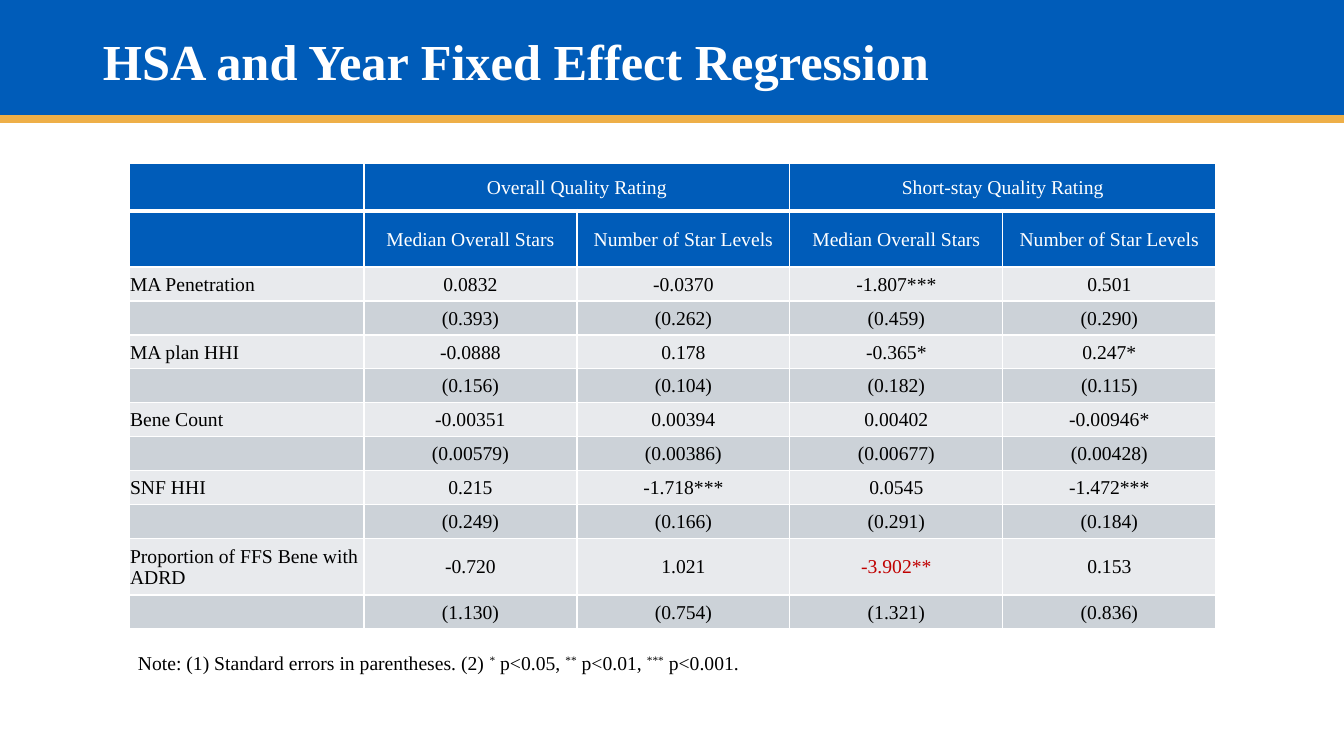
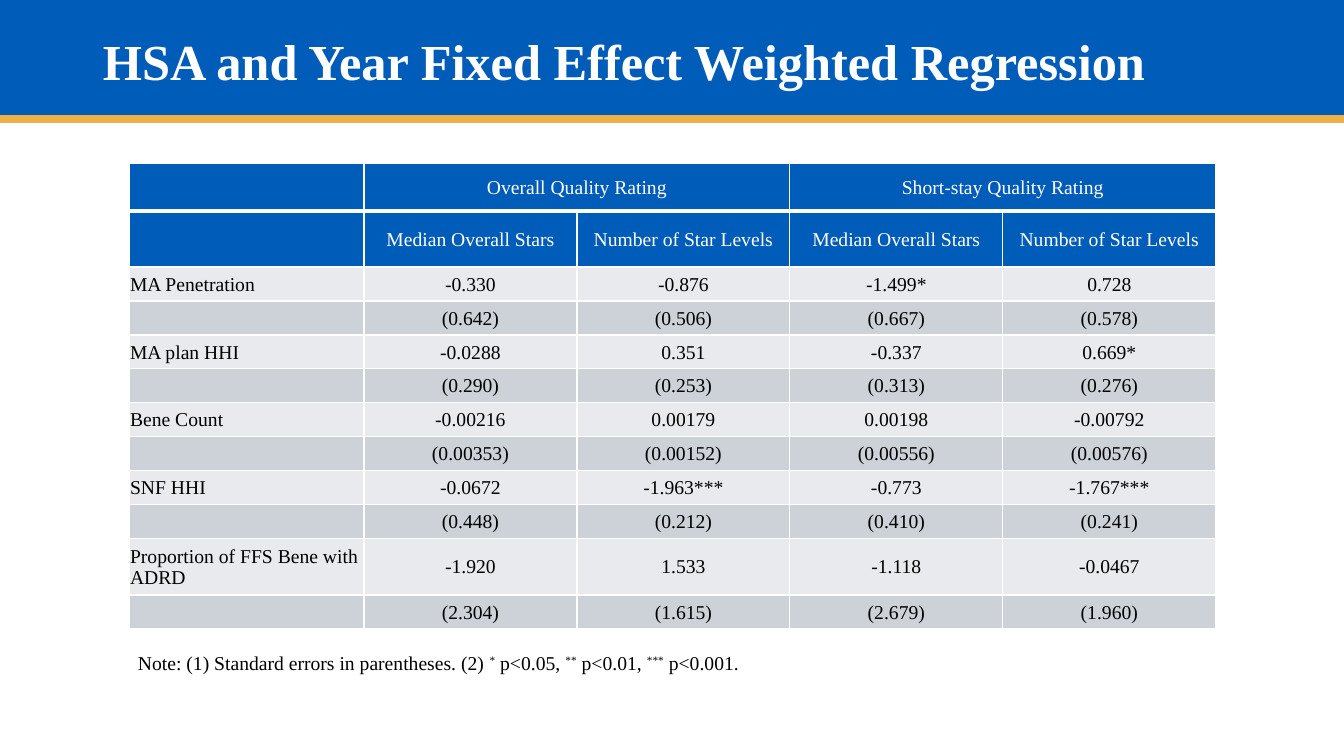
"""Build two regression-table slides that share one header layout."""
import dataclasses

import pptx
import pptx.dml.color
import pptx.enum.shapes
import pptx.enum.text
import pptx.oxml.xmlchemy
import pptx.util

Inches = pptx.util.Inches
Pt = pptx.util.Pt
RGB = pptx.dml.color.RGBColor.from_string


@dataclasses.dataclass(frozen=True)
class Theme:
    font: str = "Times New Roman"
    title_size: int = 36
    body_size: int = 14
    blue: str = "005CB9"
    gold: str = "EEAF48"
    white: str = "FFFFFF"
    black: str = "000000"
    red: str = "C00000"
    light: str = "E8EAED"
    dark: str = "CCD2D8"


THEME = Theme()


def set_font(paragraph, size, color, bold=False):
    paragraph.font.name = THEME.font
    paragraph.font.size = Pt(size)
    paragraph.font.bold = bold
    paragraph.font.color.rgb = RGB(color)


def add_border(cell, side, width):
    line = pptx.oxml.xmlchemy.OxmlElement(f"a:{side}")
    line.set("w", str(Pt(width)))
    fill = pptx.oxml.xmlchemy.OxmlElement("a:solidFill")
    color = pptx.oxml.xmlchemy.OxmlElement("a:srgbClr")
    color.set("val", THEME.white)
    fill.append(color)
    line.append(fill)
    cell._tc.get_or_add_tcPr().append(line)


HEADERS = [
    ["", "Overall Quality Rating", "", "Short-stay Quality Rating", ""],
    [""] + ["Median Overall Stars", "Number of Star Levels"] * 2,
]
VARIABLES = ["MA Penetration", "MA plan HHI", "Bene Count", "SNF HHI",
             "Proportion of FFS Bene with ADRD"]
NOTE = [("Note: (1) Standard errors in parentheses. (2) ", False),
        ("*", True), (" p<0.05, ", False),
        ("**", True), (" p<0.01, ", False),
        ("***", True), (" p<0.001.", False)]
HIGHLIGHTS = {"-3.902**"}
REGRESSIONS = {
    "HSA and Year Fixed Effect Regression": [
        "0.0832 -0.0370 -1.807*** 0.501",
        "(0.393) (0.262) (0.459) (0.290)",
        "-0.0888 0.178 -0.365* 0.247*",
        "(0.156) (0.104) (0.182) (0.115)",
        "-0.00351 0.00394 0.00402 -0.00946*",
        "(0.00579) (0.00386) (0.00677) (0.00428)",
        "0.215 -1.718*** 0.0545 -1.472***",
        "(0.249) (0.166) (0.291) (0.184)",
        "-0.720 1.021 -3.902** 0.153",
        "(1.130) (0.754) (1.321) (0.836)",
    ],
    "HSA and Year Fixed Effect Weighted Regression": [
        "-0.330 -0.876 -1.499* 0.728",
        "(0.642) (0.506) (0.667) (0.578)",
        "-0.0288 0.351 -0.337 0.669*",
        "(0.290) (0.253) (0.313) (0.276)",
        "-0.00216 0.00179 0.00198 -0.00792",
        "(0.00353) (0.00152) (0.00556) (0.00576)",
        "-0.0672 -1.963*** -0.773 -1.767***",
        "(0.448) (0.212) (0.410) (0.241)",
        "-1.920 1.533 -1.118 -0.0467",
        "(2.304) (1.615) (2.679) (1.960)",
    ],
}

TABLE_WIDTH, TABLE_HEIGHT = Inches(10.78), Inches(4.62)
LABEL_WIDTH = Inches(2.33)
TALL_ROWS = {0: Inches(0.47), 1: Inches(0.56), 10: Inches(0.56)}
ROW_COUNT = len(HEADERS) + 2 * len(VARIABLES)
ROW_HEIGHT = (TABLE_HEIGHT - sum(TALL_ROWS.values())) // (ROW_COUNT - len(TALL_ROWS))

deck = pptx.Presentation()
deck.slide_width = Inches(13.33)
deck.slide_height = Inches(7.5)
layout = deck.slide_layouts[5]

heading = layout.placeholders[0]
heading.left, heading.top = Inches(0.92), Inches(0.32)
heading.width, heading.height = Inches(11.5), Inches(0.84)

slides = [deck.slides.add_slide(layout) for _ in REGRESSIONS]

band = slides[0].shapes.add_shape(
    pptx.enum.shapes.MSO_SHAPE.RECTANGLE, 0, 0, deck.slide_width, Inches(1.18))
band.shadow.inherit = False
band.fill.solid()
band.fill.fore_color.rgb = RGB(THEME.blue)
band.line.fill.background()
rule = slides[0].shapes.add_connector(
    pptx.enum.shapes.MSO_CONNECTOR.STRAIGHT,
    0, Inches(1.18), deck.slide_width, Inches(1.18))
rule.line.color.rgb = RGB(THEME.gold)
rule.line.width = Pt(5.5)
rule._element.spPr.append(pptx.oxml.xmlchemy.OxmlElement("a:effectLst"))
for position, part in enumerate([band, rule], start=2):
    layout.shapes.element.insert(position, part.element)

for slide, (title_text, results) in zip(slides, REGRESSIONS.items()):
    title = slide.shapes.title
    title.text = title_text
    title.text_frame.vertical_anchor = pptx.enum.text.MSO_ANCHOR.TOP
    title_line = title.text_frame.paragraphs[0]
    title_line.alignment = pptx.enum.text.PP_ALIGN.LEFT
    title_line.line_spacing = 0.9
    set_font(title_line, THEME.title_size, THEME.white, bold=True)

    labels = [label for variable in VARIABLES for label in (variable, "")]
    rows = HEADERS + [[label] + result.split() for label, result in zip(labels, results)]
    table = slide.shapes.add_table(
        ROW_COUNT, len(rows[0]), Inches(1.28), Inches(1.62),
        TABLE_WIDTH, TABLE_HEIGHT).table
    for index, column in enumerate(table.columns):
        column.width = LABEL_WIDTH if index == 0 else (TABLE_WIDTH - LABEL_WIDTH) // 4
    for row_index, values in enumerate(rows):
        table.rows[row_index].height = TALL_ROWS.get(row_index, ROW_HEIGHT)
        is_header = row_index < len(HEADERS)
        stripe = THEME.dark if row_index % 2 else THEME.light
        for column_index, value in enumerate(values):
            cell = table.cell(row_index, column_index)
            cell.text = value
            cell.vertical_anchor = pptx.enum.text.MSO_ANCHOR.MIDDLE
            cell.margin_left = cell.margin_right = cell.margin_top = Inches(0.01)
            cell.margin_bottom = 0
            add_border(cell, "lnL", 1)
            add_border(cell, "lnR", 1)
            add_border(cell, "lnT", 3 if row_index == 1 else 1)
            add_border(cell, "lnB", 3 if row_index == 0 else 1)
            cell.fill.solid()
            cell.fill.fore_color.rgb = RGB(THEME.blue if is_header else stripe)
            entry = cell.text_frame.paragraphs[0]
            if column_index > 0:
                entry.alignment = pptx.enum.text.PP_ALIGN.CENTER
            body_color = THEME.red if value in HIGHLIGHTS else THEME.black
            set_font(entry, THEME.body_size, THEME.white if is_header else body_color)
    for first in (1, 3):
        table.cell(0, first).merge(table.cell(0, first + 1))

    note = slide.shapes.add_textbox(
        Inches(1.27), Inches(6.41), Inches(6.25), Inches(0.34)).text_frame
    note.word_wrap = False
    note.auto_size = pptx.enum.text.MSO_AUTO_SIZE.SHAPE_TO_FIT_TEXT
    note_line = note.paragraphs[0]
    set_font(note_line, THEME.body_size, THEME.black)
    for text, is_superscript in NOTE:
        run = note_line.add_run()
        run.text = text
        if is_superscript:
            run._r.get_or_add_rPr().set("baseline", "30000")

deck.save("out.pptx")
